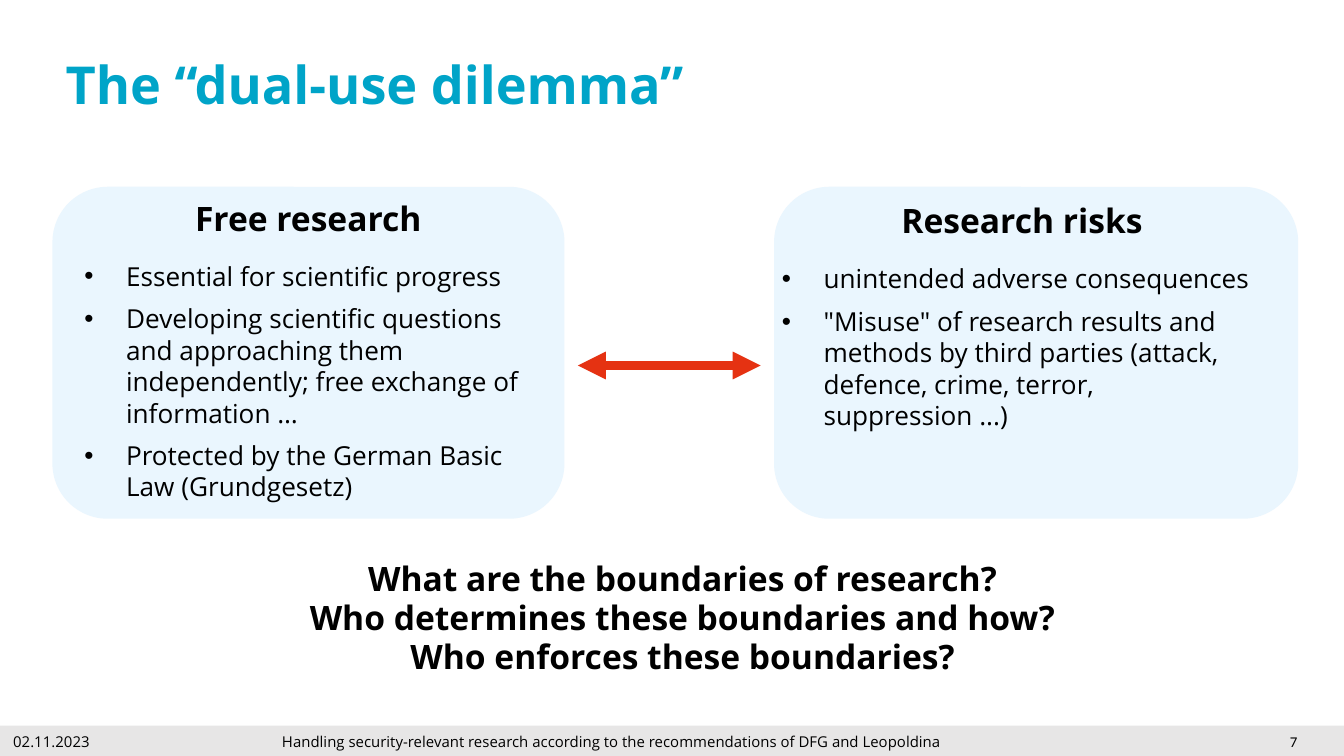
from dataclasses import dataclass

import pptx
import pptx.dml.color
import pptx.enum.shapes
import pptx.enum.text
import pptx.oxml
import pptx.oxml.ns
import pptx.util

Inches = pptx.util.Inches
Pt = pptx.util.Pt
ALIGN = pptx.enum.text.PP_ALIGN
ANCHOR = pptx.enum.text.MSO_ANCHOR
SHAPE = pptx.enum.shapes.MSO_SHAPE


@dataclass(frozen=True)
class Theme:
    font: str = "Open Sans"
    number_font: str = "Calibri"
    title: str = "00A4C8"
    text: str = "000000"
    panel: str = "EAF6FE"
    arrow: str = "E53212"
    footer: str = "E7E6E6"
    title_size: int = 28
    heading_size: int = 18
    body_size: int = 14
    footer_size: int = 8


THEME = Theme()


def rgb(value):
    return pptx.dml.color.RGBColor.from_string(value)


def add_xml(parent, tag, **attributes):
    child = pptx.oxml.parse_xml(f"<a:{tag} {pptx.oxml.ns.nsdecls('a')}/>")
    for name, value in attributes.items():
        child.set(name, str(value))
    parent.append(child)
    return child


def add_span(para, text, size, font=THEME.font, color=THEME.text, bold=False):
    span = para.add_run()
    span.text = text
    span.font.name = font
    span.font.size = Pt(size)
    span.font.bold = bold
    span.font.color.rgb = rgb(color)


def add_text(frame, text, align=ALIGN.LEFT, after=0, line=None, bullet=False, **style):
    """Write one paragraph, using the frame's first one while it is empty."""
    para = frame.paragraphs[0]
    if para.runs:
        para = frame.add_paragraph()
    if bullet:
        properties = para._p.get_or_add_pPr()
        properties.set("marL", str(Inches(0.31)))
        properties.set("indent", str(-Inches(0.31)))
        add_xml(properties, "buFont", typeface="Arial")
        add_xml(properties, "buChar", char="•")
    para.alignment = align
    para.space_after = Pt(after)
    if line:
        para.line_spacing = Pt(line)
    add_span(para, text, **style)
    return para


def add_frame(page, left, top, width, height):
    box = page.shapes.add_textbox(Inches(left), Inches(top), Inches(width), Inches(height))
    box.text_frame.word_wrap = True
    return box.text_frame


def add_block(page, kind, left, top, width, height, color):
    block = page.shapes.add_shape(
        kind, Inches(left), Inches(top), Inches(width), Inches(height))
    block.shadow.inherit = False
    block.fill.solid()
    block.fill.fore_color.rgb = rgb(color)
    block.line.fill.background()
    return block


def add_title(page, left, top, width, height, text):
    frame = add_frame(page, left, top, width, height)
    frame.vertical_anchor = ANCHOR.MIDDLE
    add_text(frame, text, line=32, size=THEME.title_size, color=THEME.title, bold=True)


def add_panel(page, left, top, width, height, heading, points, text_box):
    """Draw a rounded panel; text_box is x, y, width, height from its corner."""
    add_block(page, SHAPE.ROUNDED_RECTANGLE, left, top, width, height, THEME.panel)
    x, y, text_width, text_height = text_box
    frame = add_frame(page, left + x, top + y, text_width, text_height)
    add_text(frame, heading, align=ALIGN.CENTER, after=12,
             size=THEME.heading_size, bold=True)
    for point in points:
        add_text(frame, point, after=6, bullet=True, size=THEME.body_size)


def add_double_arrow(page, left, right, y):
    arrow = page.shapes.add_connector(
        pptx.enum.shapes.MSO_CONNECTOR.STRAIGHT,
        Inches(left), Inches(y), Inches(right), Inches(y))
    arrow.line.color.rgb = rgb(THEME.arrow)
    arrow.line.width = Pt(5)
    properties = arrow._element.spPr
    for end in ("headEnd", "tailEnd"):
        add_xml(properties.get_or_add_ln(), end, type="triangle")
    add_xml(properties, "effectLst")


def add_questions(page, left, top, width, height, questions):
    frame = add_frame(page, left, top, width, height)
    frame.margin_left = frame.margin_right = frame.margin_top = frame.margin_bottom = 0
    for question in questions:
        add_text(frame, question, align=ALIGN.CENTER, line=21,
                 size=THEME.heading_size, bold=True)


def add_footer(page, left, top, width, height, date, caption, number):
    bar = add_block(page, SHAPE.RECTANGLE, left, top, width, height, THEME.footer)
    frame = bar.text_frame
    frame.vertical_anchor = ANCHOR.MIDDLE
    para = add_text(frame, f"{date}\t{caption}\t", size=THEME.footer_size)
    add_span(para, number, THEME.footer_size, font=THEME.number_font)
    tabs = add_xml(para._p.get_or_add_pPr(), "tabLst")
    for stop in (2, 9.5):
        add_xml(tabs, "tab", pos=Inches(stop), algn="l")


def main():
    deck = pptx.Presentation()
    deck.slide_width = Inches(10)
    deck.slide_height = deck.slide_width * 9 // 16
    page = deck.slides.add_slide(deck.slide_layouts[6])

    add_footer(page, 0, 5.4, 10, 0.24, "02.11.2023",
               "Handling security-relevant research according to the "
               "recommendations of DFG and Leopoldina", "7")
    add_title(page, 0.39, 0.14, 9.21, 0.99, "The “dual-use dilemma”")

    panel_top, panel_height = 1.39, 2.47
    free_left, free_width, risk_left, risk_width = 0.39, 3.81, 5.76, 3.9
    add_panel(page, free_left, panel_top, free_width, panel_height, "Free research", [
        "Essential for scientific progress",
        "Developing scientific questions and approaching them independently; "
        "free exchange of information …",
        "Protected by the German Basic Law (Grundgesetz)",
    ], text_box=(0.14, 0.03, 3.53, 2.39))
    add_panel(page, risk_left, panel_top, risk_width, panel_height, "Research risks", [
        "unintended adverse consequences",
        '"Misuse" of research results and methods by third parties '
        "(attack, defence, crime, terror, suppression ...)",
    ], text_box=(-0.04, 0.05, 3.77, 1.83))

    gap = 0.1
    add_double_arrow(page, free_left + free_width + gap, risk_left - gap, 2.72)
    add_questions(page, 2.19, 4.16, 5.78, 0.88, [
        "What are the boundaries of research?",
        "Who determines these boundaries and how?",
        "Who enforces these boundaries?",
    ])
    deck.save("out.pptx")


if __name__ == "__main__":
    main()
